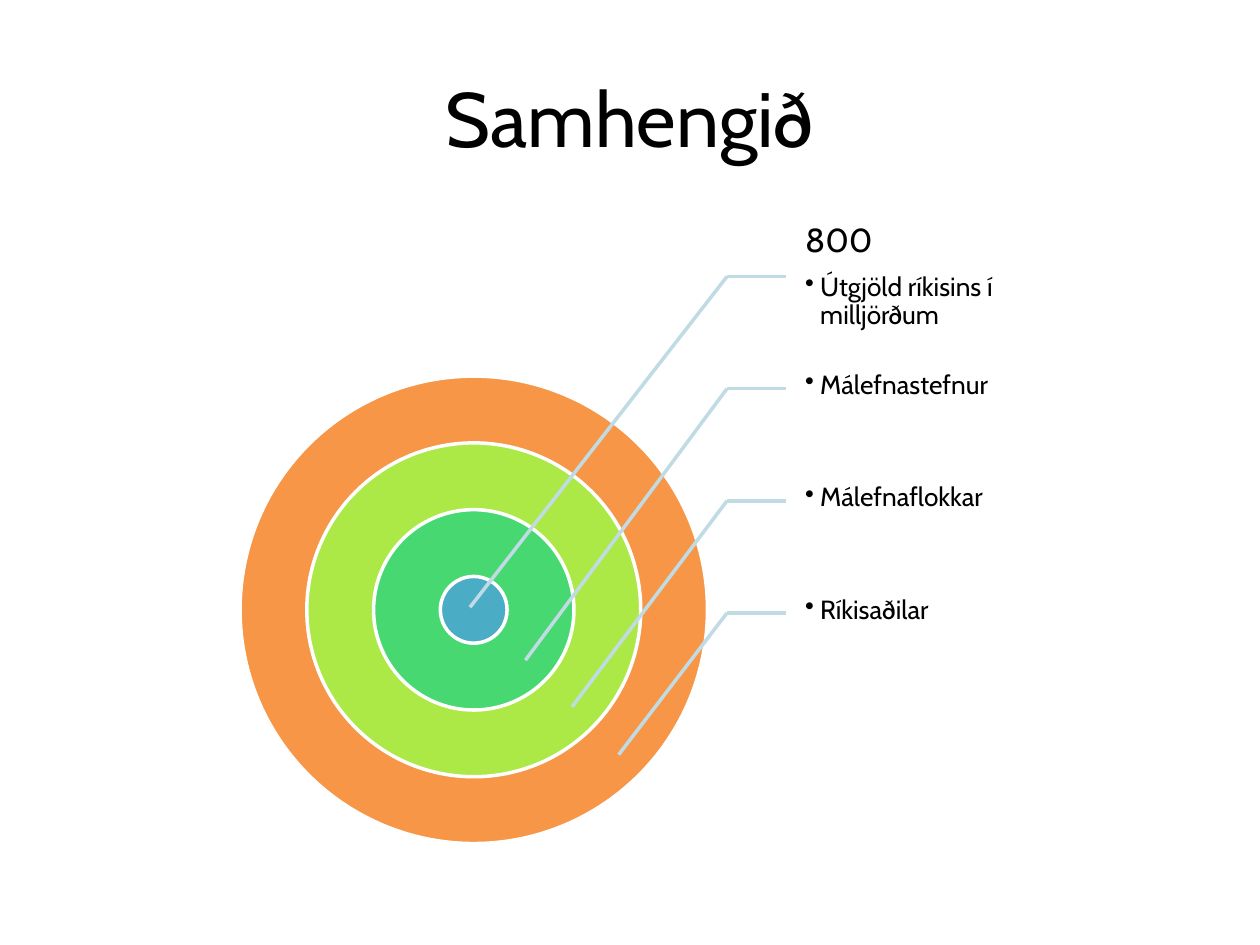
from dataclasses import dataclass

from lxml import etree
from pptx import Presentation
from pptx.dml.color import RGBColor
from pptx.enum.shapes import MSO_CONNECTOR, MSO_SHAPE
from pptx.enum.text import MSO_ANCHOR, PP_ALIGN
from pptx.oxml.ns import qn
from pptx.util import Inches, Pt

OVAL = MSO_SHAPE.OVAL
LINE = MSO_CONNECTOR.STRAIGHT
MIDDLE = MSO_ANCHOR.MIDDLE
CENTER = PP_ALIGN.CENTER

FONT = "Cabin"
COLORS = {
    "text": "000000",
    "edge": "FFFFFF",
    "leader": "C1DBE5",
    "orange": "F79646",
    "lime": "ACE946",
    "green": "47D872",
    "blue": "4BACC6",
}
MID_X, MID_Y = 3.76, 4.84
CORE, GROWTH = 0.53, 1.06
LABEL_X, LABEL_Y, LABEL_W, LABEL_H = 6.24, 1.75, 1.86, 0.89
BEND_X = 5.77
PAD, PAD_LEFT, PAD_LOW = 0.03, 0.15, 0.43
INDENT = 0.12


@dataclass
class Level:
    """One ring, from the core outwards, with its label and leader tip."""
    color: str
    text: str
    tip_x: float
    tip_y: float
    head: str = ""


LEVELS = [
    Level("blue", "Útgjöld ríkisins í milljörðum", 3.73, 4.82, "800"),
    Level("green", "Málefnastefnur", 4.17, 5.24),
    Level("lime", "Málefnaflokkar", 4.54, 5.61),
    Level("orange", "Ríkisaðilar", 4.91, 5.99),
]


def color(name: str) -> RGBColor:
    return RGBColor.from_string(COLORS[name])


def style(para, size: float) -> None:
    para.font.name = FONT
    para.font.size = Pt(size)
    para.font.color.rgb = color("text")


def add_title(slide, text: str) -> None:
    box = slide.shapes.add_textbox(Inches(0.5), Inches(0.3), Inches(9), Inches(1.25))
    frame = box.text_frame
    frame.word_wrap = True
    frame.vertical_anchor = MIDDLE
    para = frame.paragraphs[0]
    para.text = text
    para.alignment = CENTER
    style(para, 44)


def add_ring(slide, level: Level, rank: int) -> None:
    size = CORE + GROWTH * rank
    ring = slide.shapes.add_shape(
        OVAL, Inches(MID_X - size / 2), Inches(MID_Y - size / 2),
        Inches(size), Inches(size))
    ring.shadow.inherit = False
    ring.fill.solid()
    ring.fill.fore_color.rgb = color(level.color)
    ring.line.color.rgb = color("edge")
    ring.line.width = Pt(2)


def add_bullet(para) -> None:
    props = para._p.get_or_add_pPr()
    props.set("marL", str(Inches(INDENT)))
    props.set("indent", str(-Inches(INDENT)))
    etree.SubElement(props, qn("a:buChar")).set("char", "•")


def add_label(slide, level: Level, top: float):
    """Without a heading, the bullet still sits at the second line."""
    box = slide.shapes.add_textbox(
        Inches(LABEL_X), Inches(top), Inches(LABEL_W), Inches(LABEL_H))
    frame = box.text_frame
    frame.word_wrap = True
    frame.margin_left = Inches(PAD_LEFT)
    frame.margin_right = frame.margin_bottom = Inches(PAD)
    frame.margin_top = Inches(PAD if level.head else PAD_LOW)
    para = frame.paragraphs[0]
    if level.head:
        para.text = level.head
        para.line_spacing = 0.9
        para.space_after = Pt(7.5)
        style(para, 19)
        para = frame.add_paragraph()
    para.text = level.text
    add_bullet(para)
    para.line_spacing = 0.9
    style(para, 15)
    return box


def add_line(slide, x1: float, y1: float, x2: float, y2: float):
    line = slide.shapes.add_connector(
        LINE, Inches(x1), Inches(y1), Inches(x2), Inches(y2))
    line.line.color.rgb = color("leader")
    line.line.width = Pt(2)
    etree.SubElement(line._element.spPr, qn("a:effectLst"))
    return line


def add_leader(slide, level: Level, label, y: float) -> None:
    add_line(slide, BEND_X, y, LABEL_X, y).end_connect(label, 1)
    add_line(slide, BEND_X, y, level.tip_x, level.tip_y)


def main() -> None:
    deck = Presentation()
    deck.slide_width, deck.slide_height = Inches(10), Inches(7.5)
    slide = deck.slides.add_slide(deck.slide_layouts[6])
    add_title(slide, "Samhengið")
    for rank, level in reversed(list(enumerate(LEVELS))):
        add_ring(slide, level, rank)
    for rank, level in enumerate(LEVELS):
        top = LABEL_Y + LABEL_H * rank
        label = add_label(slide, level, top)
        add_leader(slide, level, label, top + LABEL_H / 2)
    deck.save("out.pptx")


if __name__ == "__main__":
    main()
